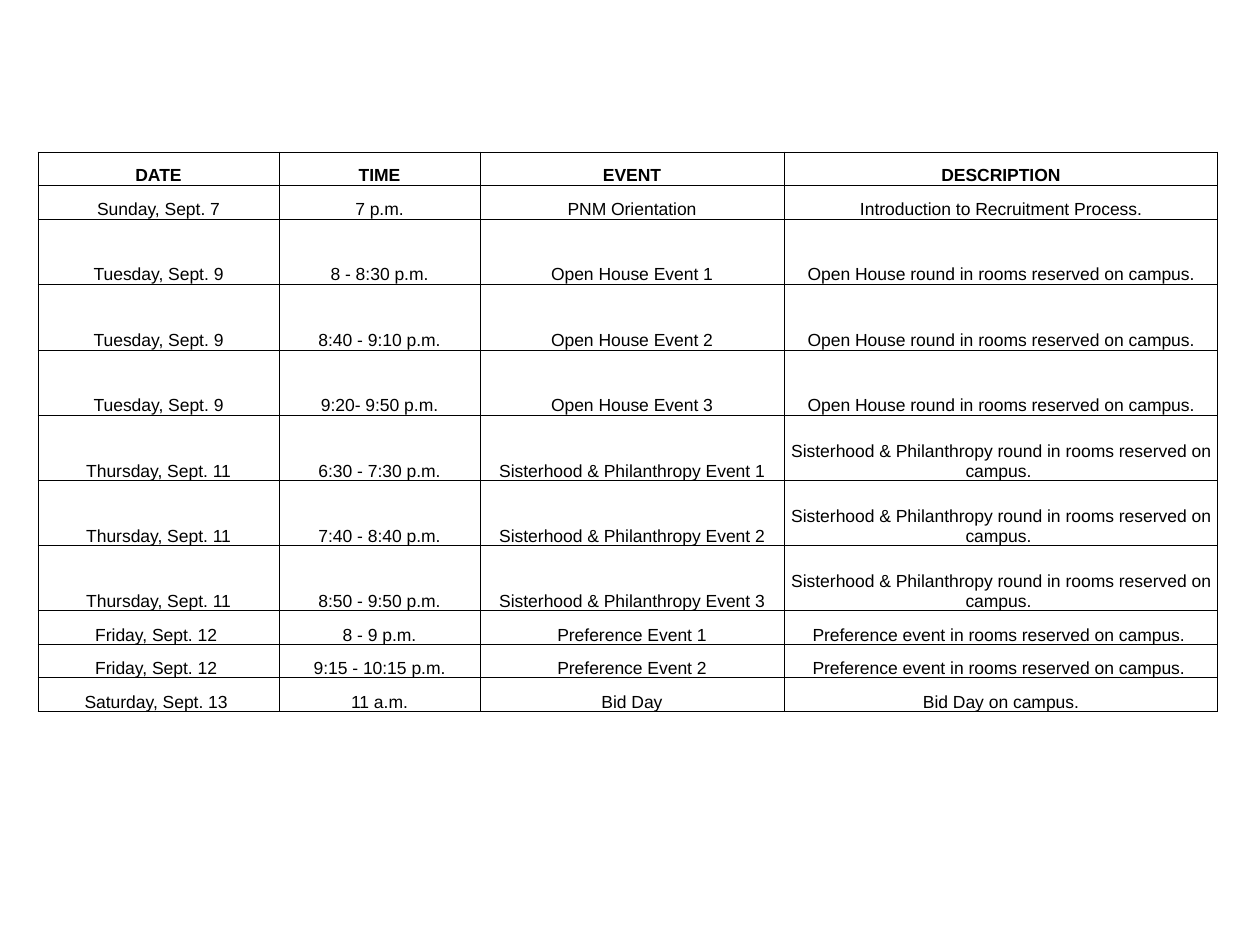
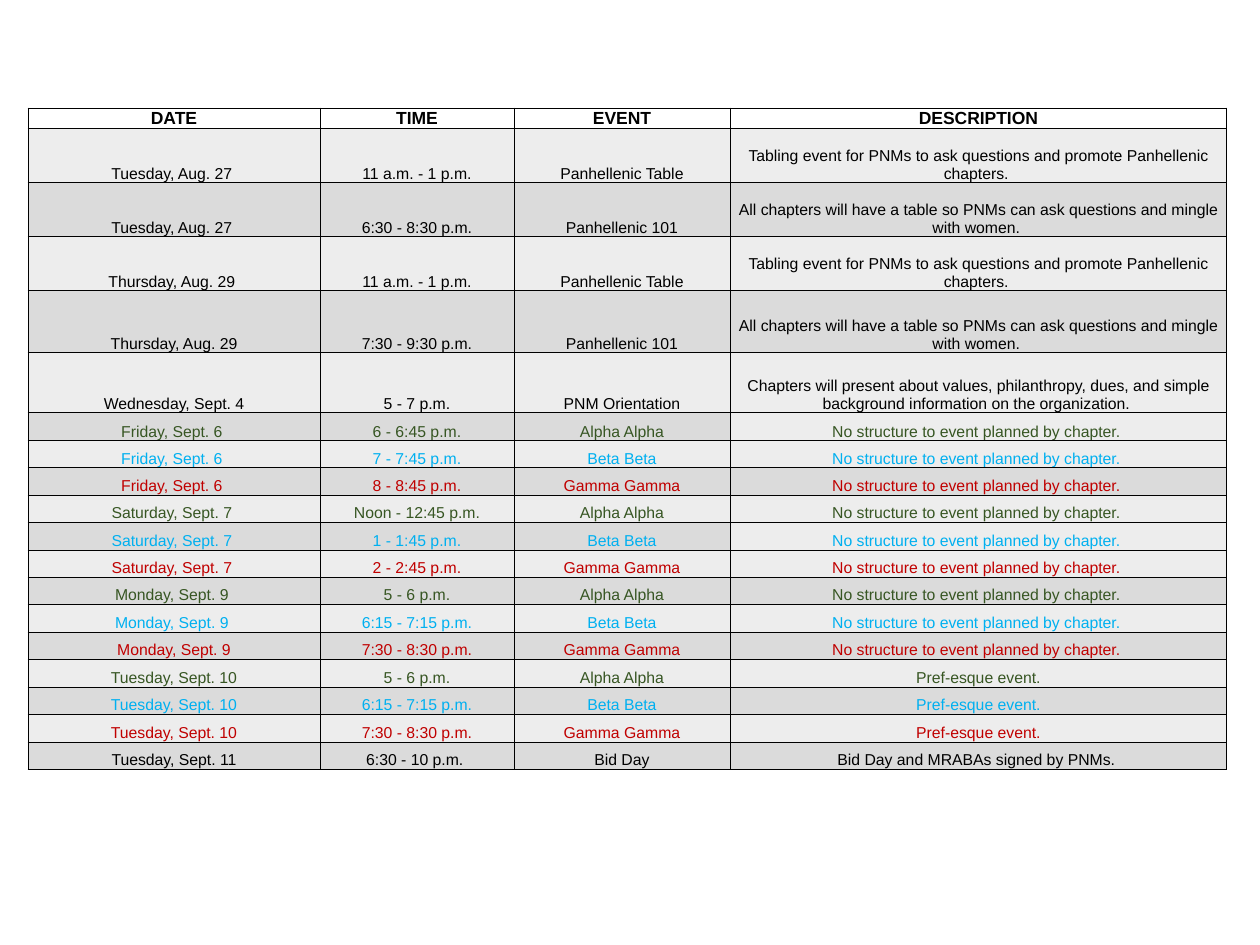
from dataclasses import dataclass
from itertools import pairwise
from typing import NamedTuple

from lxml import etree
from pptx import Presentation
from pptx import util as u
from pptx.dml.color import RGBColor
from pptx.enum import text
from pptx.oxml import ns

EMU_PER_PX = 914400 / 126
SLIDE_WIDTH, SLIDE_HEIGHT = 1260, 945
CELL_INSET = 1
FONT = "Arial"
HEADER_SIZE = 10
BORDER_WIDTH = u.Pt(0.5)

BLACK = RGBColor(0x00, 0x00, 0x00)
LIGHT_GREY = RGBColor(0xED, 0xED, 0xED)
MID_GREY = RGBColor(0xDB, 0xDB, 0xDB)
CHAPTER_COLOURS = {
    "Alpha Alpha": RGBColor(0x37, 0x56, 0x23),
    "Beta Beta": RGBColor(0x00, 0xB0, 0xF0),
    "Gamma Gamma": RGBColor(0xC0, 0x00, 0x00),
}


class Event(NamedTuple):
    date: str
    time: str
    name: str
    description: str


@dataclass(frozen=True)
class Schedule:
    column_edges: tuple[int, ...]
    row_edges: tuple[int, ...]
    body_size: int
    events: tuple[Event, ...]
    banded: bool = False
    light_cells: frozenset[tuple[int, int]] = frozenset()


HEADER = Event("DATE", "TIME", "EVENT", "DESCRIPTION")
OPEN_HOUSE = "Open House round in rooms reserved on campus."
SISTERHOOD = "Sisterhood & Philanthropy round in rooms reserved on campus. "
PREFERENCE = "Preference event in rooms reserved on campus. "
TABLING = "Tabling event for PNMs to ask questions and promote Panhellenic chapters. "
MINGLING = "All chapters will have a table so PNMs can ask questions and mingle with women. "
PRESENTING = (
    "Chapters will present about values, philanthropy, dues, "
    "and simple background information on the organization. "
)
UNSTRUCTURED = "No structure to event planned by chapter. "
PREF_ESQUE = "Pref-esque event."

FORMAL_RECRUITMENT = Schedule(
    column_edges=(38, 279, 480, 784, 1218),
    row_edges=(152, 185, 219, 284, 350, 415, 481, 546, 611, 645, 678, 712),
    body_size=10,
    events=(
        Event("Sunday, Sept. 7", "7 p.m.", "PNM Orientation", "Introduction to Recruitment Process."),
        Event("Tuesday, Sept. 9", "8 - 8:30 p.m.", "Open House Event 1", OPEN_HOUSE),
        Event("Tuesday, Sept. 9", "8:40 - 9:10 p.m.", "Open House Event 2", OPEN_HOUSE),
        Event("Tuesday, Sept. 9", "9:20- 9:50 p.m.", "Open House Event 3", OPEN_HOUSE),
        Event("Thursday, Sept. 11", "6:30 - 7:30 p.m.", "Sisterhood & Philanthropy Event 1", SISTERHOOD),
        Event("Thursday, Sept. 11", "7:40 - 8:40 p.m.", "Sisterhood & Philanthropy Event 2", SISTERHOOD),
        Event("Thursday, Sept. 11", "8:50 - 9:50 p.m.", "Sisterhood & Philanthropy Event 3", SISTERHOOD),
        Event("Friday, Sept. 12 ", "8 - 9 p.m.", "Preference Event 1", PREFERENCE),
        Event("Friday, Sept. 12 ", "9:15 - 10:15 p.m.", "Preference Event 2", PREFERENCE),
        Event("Saturday, Sept. 13 ", "11 a.m.", "Bid Day", "Bid Day on campus."),
    ),
)

CHAPTER_RECRUITMENT = Schedule(
    column_edges=(28, 320, 514, 730, 1227),
    row_edges=(
        108, 128, 182, 236, 290, 352, 412, 440, 467, 495,
        522, 550, 577, 604, 632, 659, 687, 714, 742, 769,
    ),
    body_size=9,
    events=(
        Event("Tuesday, Aug. 27 ", "11 a.m. - 1 p.m.", "Panhellenic Table", TABLING),
        Event("Tuesday, Aug. 27 ", "6:30 - 8:30 p.m.", "Panhellenic 101", MINGLING),
        Event("Thursday, Aug. 29 ", "11 a.m. - 1 p.m.", "Panhellenic Table", TABLING),
        Event("Thursday, Aug. 29", "7:30 - 9:30 p.m.", "Panhellenic 101", MINGLING),
        Event("Wednesday, Sept. 4", "5 - 7 p.m.", "PNM Orientation", PRESENTING),
        Event("Friday, Sept. 6 ", "6 - 6:45 p.m.", "Alpha Alpha", UNSTRUCTURED),
        Event("Friday, Sept. 6 ", "7 - 7:45 p.m.", "Beta Beta", UNSTRUCTURED),
        Event("Friday, Sept. 6 ", "8 - 8:45 p.m.", "Gamma Gamma", UNSTRUCTURED),
        Event("Saturday, Sept. 7 ", "Noon - 12:45 p.m.", "Alpha Alpha", UNSTRUCTURED),
        Event("Saturday, Sept. 7 ", "1 - 1:45 p.m.", "Beta Beta", UNSTRUCTURED),
        Event("Saturday, Sept. 7 ", "2 - 2:45 p.m.", "Gamma Gamma", UNSTRUCTURED),
        Event("Monday, Sept. 9 ", "5 - 6 p.m.", "Alpha Alpha", UNSTRUCTURED),
        Event("Monday, Sept. 9 ", "6:15 - 7:15 p.m.", "Beta Beta", UNSTRUCTURED),
        Event("Monday, Sept. 9", "7:30 - 8:30 p.m.", "Gamma Gamma", UNSTRUCTURED),
        Event("Tuesday, Sept. 10", "5 - 6 p.m.", "Alpha Alpha", PREF_ESQUE),
        Event("Tuesday, Sept. 10", "6:15 - 7:15 p.m.", "Beta Beta", PREF_ESQUE),
        Event("Tuesday, Sept. 10", "7:30 - 8:30 p.m.", "Gamma Gamma", PREF_ESQUE),
        Event("Tuesday, Sept. 11", "6:30 - 10 p.m. ", "Bid Day", "Bid Day and MRABAs signed by PNMs. "),
    ),
    banded=True,
    light_cells=frozenset({(6, 3), (10, 3)}),
)


def px(length: int) -> u.Emu:
    return u.Emu(round(length * EMU_PER_PX))


def add_borders(cell) -> None:
    properties = cell._tc.get_or_add_tcPr()
    for side in ("a:lnL", "a:lnR", "a:lnT", "a:lnB"):
        line = etree.SubElement(properties, ns.qn(side), w=str(BORDER_WIDTH))
        fill = etree.SubElement(line, ns.qn("a:solidFill"))
        etree.SubElement(fill, ns.qn("a:srgbClr"), val=str(BLACK))


def fill_cell(cell, schedule: Schedule, row: int, column: int) -> None:
    if row == 0 or not schedule.banded:
        cell.fill.background()
        return
    light = row % 2 == 1 or (row, column) in schedule.light_cells
    cell.fill.solid()
    cell.fill.fore_color.rgb = LIGHT_GREY if light else MID_GREY


def write_cell(cell, words: str, size: int, colour: RGBColor, bold: bool) -> None:
    cell.margin_left = cell.margin_right = cell.margin_top = px(CELL_INSET)
    cell.margin_bottom = 0
    cell.vertical_anchor = text.MSO_ANCHOR.BOTTOM
    cell.text_frame.text = words
    para = cell.text_frame.paragraphs[0]
    para.alignment = text.PP_ALIGN.CENTER
    for span in para.runs:
        span.font.name = FONT
        span.font.size = u.Pt(size)
        span.font.bold = bold
        span.font.color.rgb = colour


def add_schedule(page, schedule: Schedule) -> None:
    rows = (HEADER, *schedule.events)
    columns, heights = schedule.column_edges, schedule.row_edges
    frame = page.shapes.add_table(
        len(rows), len(HEADER), px(columns[0]), px(heights[0]),
        px(columns[-1] - columns[0]), px(heights[-1] - heights[0]),
    )
    table = frame.table
    table.first_row = table.horz_banding = False
    for column, (left, right) in zip(table.columns, pairwise(columns)):
        column.width = px(right - left)
    for row, (top, bottom) in zip(table.rows, pairwise(heights)):
        row.height = px(bottom - top)
    for row_index, event in enumerate(rows):
        is_header = row_index == 0
        size = HEADER_SIZE if is_header else schedule.body_size
        colour = CHAPTER_COLOURS.get(event.name, BLACK)
        for column_index, words in enumerate(event):
            cell = table.cell(row_index, column_index)
            write_cell(cell, words, size, colour, is_header)
            add_borders(cell)
            fill_cell(cell, schedule, row_index, column_index)


def main() -> None:
    deck = Presentation()
    deck.slide_width, deck.slide_height = px(SLIDE_WIDTH), px(SLIDE_HEIGHT)
    for schedule in (FORMAL_RECRUITMENT, CHAPTER_RECRUITMENT):
        page = deck.slides.add_slide(deck.slide_layouts[6])
        add_schedule(page, schedule)
    deck.save("out.pptx")


if __name__ == "__main__":
    main()
